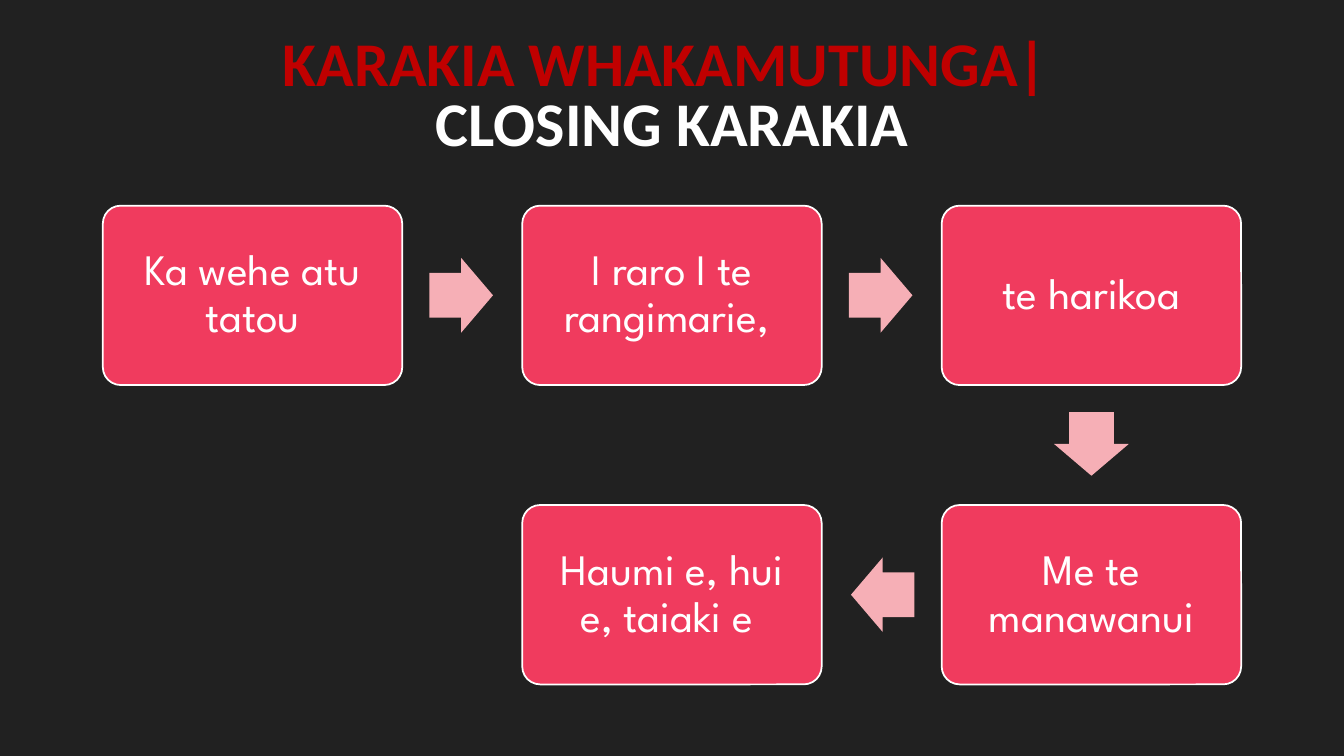
from dataclasses import dataclass

from pptx import Presentation
from pptx.dml.color import RGBColor
from pptx.enum.shapes import MSO_SHAPE
from pptx.enum.text import MSO_ANCHOR, MSO_AUTO_SIZE, PP_ALIGN
from pptx.util import Pt

ROUNDED, ARROW = MSO_SHAPE.ROUNDED_RECTANGLE, MSO_SHAPE.RIGHT_ARROW
MIDDLE, CENTER, NO_FIT = MSO_ANCHOR.MIDDLE, PP_ALIGN.CENTER, MSO_AUTO_SIZE.NONE
TITLE_ONLY = 5
EMU_PER_PX = 9144  # 100 px to the inch


@dataclass(frozen=True)
class Theme:
    background: RGBColor = RGBColor.from_string("212121")
    heading: RGBColor = RGBColor.from_string("C00000")
    text: RGBColor = RGBColor.from_string("FFFFFF")
    card: RGBColor = RGBColor.from_string("F03B5E")
    arrow: RGBColor = RGBColor.from_string("F6AFB6")
    title_font: str = "Calibri"
    card_font: str = "League Spartan"
    title_size: float = 44.4
    card_size: float = 31
    outline: float = 1.25


THEME = Theme()
TITLE_LINES = [("KARAKIA WHAKAMUTUNGA| ", THEME.heading),
               ("CLOSING KARAKIA", THEME.text)]
# Each verse with its column and row, in reading order
VERSES = [("Ka wehe atu tatou", 0, 0),
          ("I raro I te rangimarie, ", 1, 0),
          ("te harikoa", 2, 0),
          ("Me te manawanui", 2, 1),
          ("Haumi e, hui e, taiaki e ", 1, 1)]
CARD_W, CARD_H = 297, 178
ARROW_W, ARROW_H = 63, 74
ROTATIONS = {(1, 0): 0, (0, 1): 90, (-1, 0): 180}


def px(length):
    return round(length * EMU_PER_PX)


def style_line(paragraph, font_name, size, color, spacing):
    paragraph.alignment = CENTER
    paragraph.line_spacing = spacing
    for run in paragraph.runs:
        run.font.name = font_name
        run.font.size = Pt(size)
        run.font.color.rgb = color


def add_block(slide, preset, box, fill):
    block = slide.shapes.add_shape(preset, *map(px, box))
    block.shadow.inherit = False
    block.fill.solid()
    block.fill.fore_color.rgb = fill
    block.line.fill.background()
    return block


def fill_title(slide, box):
    title = slide.shapes.title
    title.left, title.top, title.width, title.height = map(px, box)
    frame = title.text_frame
    frame.text = "\n".join(line for line, _ in TITLE_LINES)
    frame.word_wrap = True
    frame.auto_size = NO_FIT
    frame.vertical_anchor = MIDDLE
    for paragraph, (_, color) in zip(frame.paragraphs, TITLE_LINES):
        style_line(paragraph, THEME.title_font, THEME.title_size, color, 0.8)
        paragraph.runs[0].font.bold = True


def add_card(slide, box, verse):
    card = add_block(slide, ROUNDED, box, THEME.card)
    card.adjustments[0] = 0.1
    card.line.color.rgb = THEME.text
    card.line.width = Pt(THEME.outline)
    frame = card.text_frame
    frame.text = verse
    frame.word_wrap = True
    frame.vertical_anchor = MIDDLE
    frame.margin_left = frame.margin_right = px(13)
    frame.margin_top = frame.margin_bottom = px(13)
    style_line(frame.paragraphs[0], THEME.card_font, THEME.card_size, THEME.text, 0.9)


def add_arrow(slide, center_x, center_y, direction):
    box = (center_x - ARROW_W / 2, center_y - ARROW_H / 2, ARROW_W, ARROW_H)
    arrow = add_block(slide, ARROW, box, THEME.arrow)
    arrow.adjustments[0] = 0.6
    arrow.adjustments[1] = 0.5
    arrow.rotation = ROTATIONS[direction]


def add_verse_flow(slide, box):
    left, top, width, height = box
    step_x = (width - CARD_W) / 2
    step_y = height - CARD_H
    # Cards
    for verse, column, row in VERSES:
        add_card(slide, (left + column * step_x, top + row * step_y, CARD_W, CARD_H), verse)
    # Arrows, each midway between two cards and 1 px nearer the first
    for (_, column, row), (_, next_column, next_row) in zip(VERSES, VERSES[1:]):
        across, down = next_column - column, next_row - row
        center_x = left + CARD_W / 2 + (column + across / 2) * step_x - across
        center_y = top + CARD_H / 2 + (row + down / 2) * step_y - down
        add_arrow(slide, center_x, center_y, (across, down))


def main():
    deck = Presentation()
    deck.slide_width, deck.slide_height = px(1333), px(750)
    slide = deck.slides.add_slide(deck.slide_layouts[TITLE_ONLY])
    slide.background.fill.solid()
    slide.background.fill.fore_color.rgb = THEME.background
    fill_title(slide, (13, 33, 1308, 130))
    add_verse_flow(slide, (102, 204, 1129, 475))
    deck.save("out.pptx")


if __name__ == "__main__":
    main()
